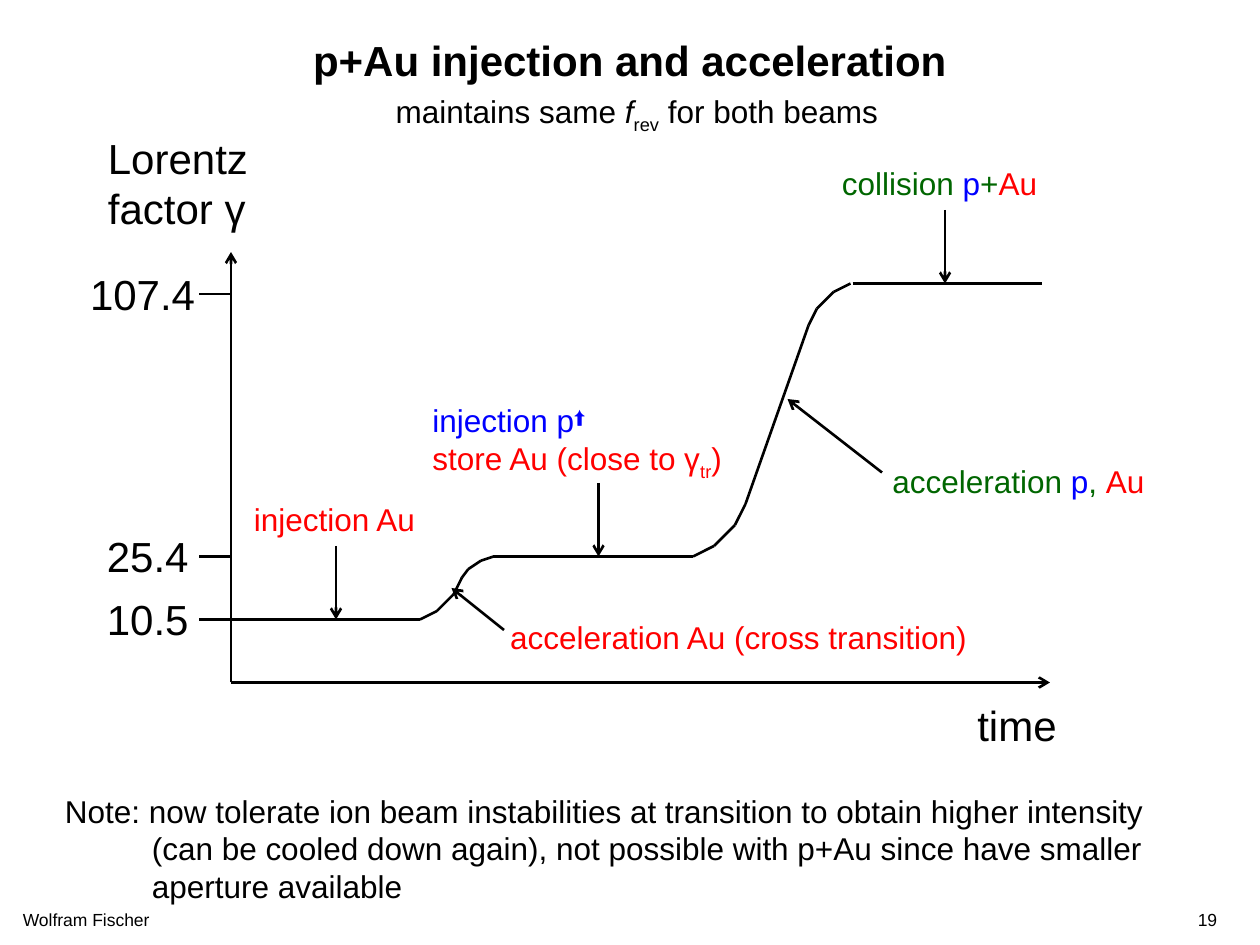
"""Build a slide that charts the Lorentz factor over time for p+Au beams."""
from itertools import pairwise

from pptx import Presentation
from pptx import util as u
from pptx.dml.color import RGBColor
from pptx.enum import shapes, text
from pptx.oxml.ns import qn
from lxml import etree

COLORS = {"black": "000000", "red": "FF0000", "blue": "0000FF", "green": "006600"}
CELL = u.Inches(1) / 12
BIG, MID, TINY = 24, 18, 10
SHIFT = {"sub": "-25000", "sup": "30000"}

TITLE = "p+Au injection and acceleration"
TITLE_BOX = (5, 3, 110, 5.4)

# Each label: box in cells, size, paragraphs of (words, color, style)
LABELS = [
    ((1, 86, 23, 4), TINY, [[("Wolfram Fischer", "black", "")]]),
    ((112, 86, 6, 4), TINY, [[("19", "black", "")]]),
    ((91.9, 66, 10.1, 6), BIG, [[("time", "black", "")]]),
    ((9.1, 12, 15.8, 10.9), BIG, [[("Lorentz\vfactor γ", "black", "")]]),
    ((7.4, 25, 12.5, 6), BIG, [[("107.4", "black", "")]]),
    ((9, 49.9, 10.3, 6), BIG, [[("25.4", "black", "")]]),
    ((9, 55.9, 10.3, 6), BIG, [[("10.5", "black", "")]]),
    ((23, 47, 17.9, 4.8), MID, [[("injection Au", "red", "")]]),
    ((40, 37.6, 31.2, 8.5), MID, [
        [("injection p", "blue", ""), ("⬆", "blue", "sup")],
        [("store Au (close to γ", "red", ""), ("tr", "red", "sub"), (")", "red", "")]]),
    ((47.4, 58.3, 46.3, 4.8), MID, [[("acceleration Au (cross transition)", "red", "")]]),
    ((83.8, 43.4, 26.5, 4.8), MID, [
        [("acceleration ", "green", ""), ("p", "blue", ""),
         (", ", "green", ""), ("Au", "red", "")]]),
    ((79, 15, 21.2, 4.8), MID, [
        [("collision ", "green", ""), ("p", "blue", ""),
         ("+", "green", ""), ("Au", "red", "")]]),
    ((36.5, 8.2, 50.5, 4.8), MID, [
        [("maintains same ", "black", ""), ("f", "black", "italic"),
         ("rev", "black", "sub"), (" for both beams", "black", "")]]),
]
NOTE_BOX = (5, 74.8, 110, 12.1)
NOTE = ("Note: now tolerate ion beam instabilities at transition to obtain higher intensity\v"
        "(can be cooled down again), not possible with p+Au since have smaller\v"
        "aperture available")
HANG = u.Inches(0.69)

PATHS = [
    [(19, 59), (22, 59), (40, 59), (41.6, 58.2), (43.2, 56.6), (44, 55),
     (44.6, 54.2), (45.8, 53.4), (47, 53), (66, 53), (68, 52), (70, 50),
     (71, 48), (77, 31), (77.8, 29.4), (79.4, 27.8), (81, 27)],
    [(81.2, 27), (99.2, 27)],
    [(19, 53), (22, 53)],
    [(19, 28), (22, 28)],
]
ARROWS = [
    ((22, 65), (100, 65)), ((22, 65), (22, 24)),
    ((32, 52), (32, 59)), ((57, 46), (57, 53)), ((90, 20), (90, 27)),
    ((48, 60), (43, 56)), ((84, 45), (75, 38)),
]


def grid(cells):
    return [round(c * CELL) for c in cells]


def paint(run, size, color="black", style=""):
    font = run.font
    font.name, font.size = "Arial", u.Pt(size)
    font.color.rgb = RGBColor.from_string(COLORS[color])
    if style == "italic":
        font.italic = True
    if style in SHIFT:
        run._r.get_or_add_rPr().set("baseline", SHIFT[style])


def label(slide, box, size, paras):
    frame = slide.shapes.add_textbox(*grid(box)).text_frame
    frame.word_wrap = size == TINY
    for i, parts in enumerate(paras):
        para = frame.add_paragraph() if i else frame.paragraphs[0]
        para.text = "".join(parts[0][0]) if len(parts) == 1 else ""
        if len(parts) == 1:
            for run in para.runs:
                paint(run, size, *parts[0][1:])
            continue
        for words, color, style in parts:
            run = para.add_run()
            run.text = words
            paint(run, size, color, style)
    return frame


def line(slide, start, end, arrow=False):
    link = slide.shapes.add_connector(
        shapes.MSO_CONNECTOR.STRAIGHT, *grid(start), *grid(end))
    link.line.width = u.Pt(1.5)
    link.line.color.rgb = RGBColor.from_string(COLORS["black"])
    if arrow:
        etree.SubElement(link.line._get_or_add_ln(), qn("a:tailEnd"), type="arrow")
    etree.SubElement(link._element.spPr, qn("a:effectLst"))


def main():
    prs = Presentation()
    prs.slide_width, prs.slide_height = u.Inches(10), u.Inches(7.5)
    slide = prs.slides.add_slide(prs.slide_layouts[5])

    title = slide.shapes.title
    title.left, title.top, title.width, title.height = grid(TITLE_BOX)
    frame = title.text_frame
    frame.text = TITLE
    frame.vertical_anchor = text.MSO_ANCHOR.MIDDLE
    frame.paragraphs[0].alignment = text.PP_ALIGN.CENTER
    paint(frame.paragraphs[0].runs[0], BIG)
    frame.paragraphs[0].runs[0].font.bold = True

    for path in PATHS:
        for start, end in pairwise(path):
            line(slide, start, end)
    for start, end in ARROWS:
        line(slide, start, end, arrow=True)

    for box, size, paras in LABELS:
        frame = label(slide, box, size, paras)
        if paras[0][0][0] == "19":
            frame.paragraphs[0].alignment = text.PP_ALIGN.CENTER

    frame = label(slide, NOTE_BOX, MID, [[(NOTE, "black", "")]])
    frame.word_wrap = True
    props = frame.paragraphs[0]._p.get_or_add_pPr()
    props.set("marL", str(HANG))
    props.set("indent", str(-HANG))

    prs.save("out.pptx")


if __name__ == "__main__":
    main()
